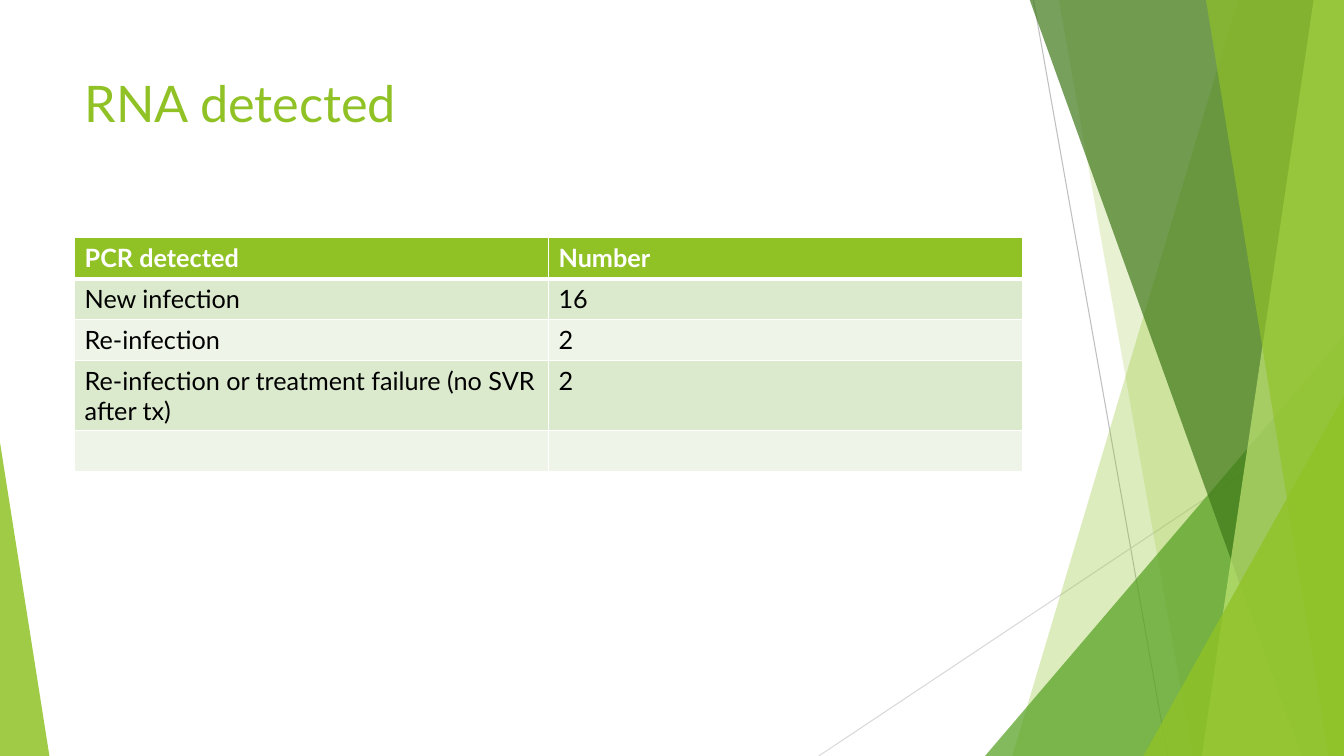
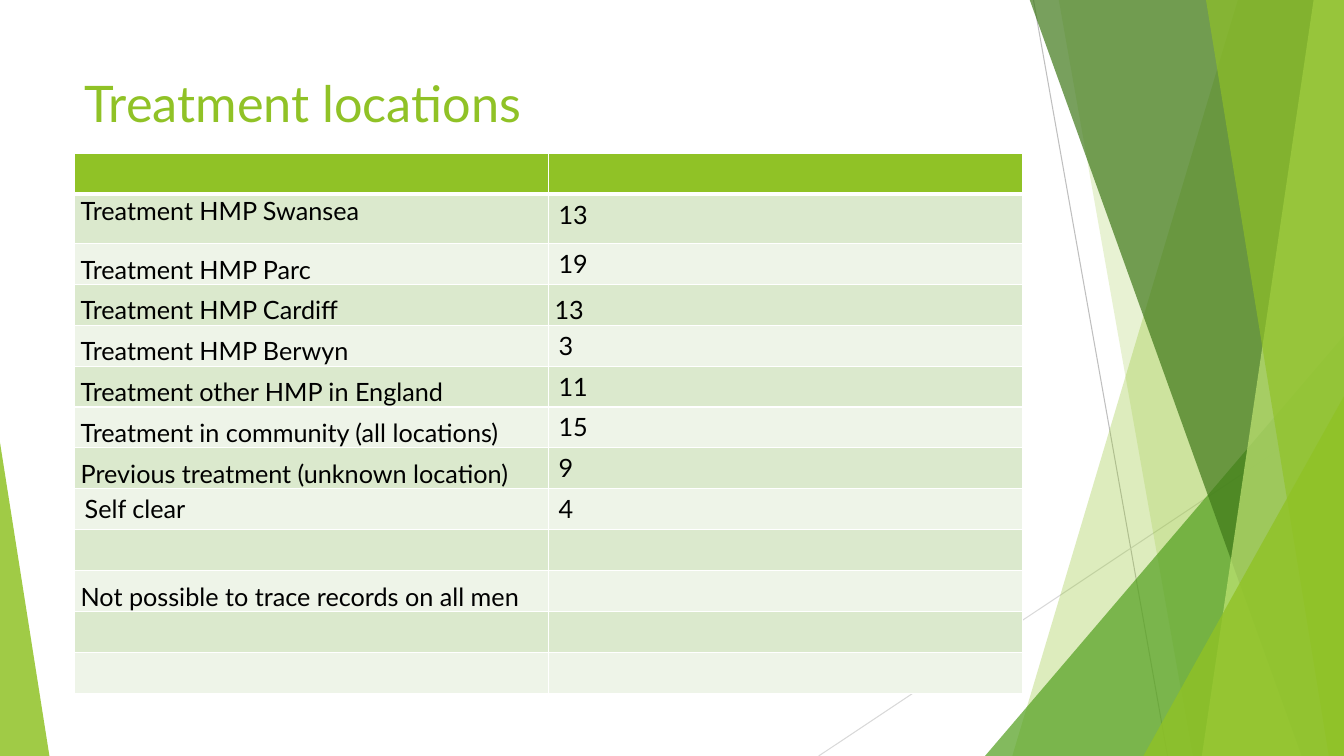
"""Build two slides of treatment figures on a shared green layout."""
from dataclasses import dataclass

from lxml.etree import SubElement as Sub
from pptx import Presentation
from pptx.dml.color import RGBColor as Rgb
from pptx.enum.shapes import MSO_CONNECTOR as Link, MSO_SHAPE as Form
from pptx.enum.text import MSO_ANCHOR as Anchor, MSO_AUTO_SIZE as Auto, PP_ALIGN as Align
from pptx.oxml.ns import qn
from pptx.slide import Slide, SlideLayout
from pptx.table import _Cell as Cell
from pptx.text.text import _Paragraph as Para
from pptx.util import Inches, Pt

HUES = {
    "lime": "90C226", "green": "54A021", "dark": "3F7819", "pale": "C0E474",
    "grey": "BFBFBF", "mist": "D9D9D9", "odd": "DBE9CD", "even": "EEF4E8",
    "white": "FFFFFF", "black": "000000",
}
FONT = "Lato"
WIDE, HIGH = 13.33, 7.5
LEFT, SPAN, TOP = 0.74, 9.4, 0.67


@dataclass
class Ray:
    start: tuple[float, float]
    end: tuple[float, float]
    hue: str


@dataclass
class Slab:
    top: float
    base: float
    hue: str
    alpha: int


@dataclass
class Wedge:
    left: float
    top: float
    width: float
    peak: int
    hue: str
    alpha: int


@dataclass
class Row:
    name: str = ""
    count: str = ""
    low: str = ""
    foot: float = 0


@dataclass
class Page:
    title: str
    depth: float
    top: float
    height: float
    tall: int
    extra: float
    rows: list[Row]


ART = [
    Ray((10.25, 0), (11.58, HIGH), "grey"),
    Ray((WIDE, 4.03), (8.12, HIGH), "mist"),
    Slab(12.28, 10.04, "lime", 30),
    Slab(10.5, 11.83, "lime", 20),
    Wedge(9.77, 3.33, 3.56, 1, "green", 72),
    Slab(10.21, 12.91, "dark", 70),
    Slab(13.03, 11.92, "pale", 70),
    Slab(11.96, 13.18, "lime", 65),
    Wedge(11.34, 3.93, 1.99, 1, "lime", 80),
    Wedge(0, 4.39, 0.49, 0, "lime", 85),
]

PAGES = [
    Page("RNA detected", 1.44, 2.36, 2.32, 3, 0.7, [
        Row("PCR detected", "Number"),
        Row("New infection", "16"),
        Row("Re-infection", "2"),
        Row("Re-infection or treatment failure (no SVR after tx)", "2"),
        Row(),
    ]),
    Page("Treatment locations", 0.85, 1.52, 5.36, 1, 0.49, [
        Row(),
        Row("Treatment HMP Swansea", "13", "n", 0.18),
        Row("Treatment HMP Parc", "19", "n"),
        Row("Treatment HMP Cardiff", "13", "nc"),
        Row("Treatment HMP Berwyn", "3", "n"),
        Row("Treatment other HMP in England", "11", "n"),
        Row("Treatment in community (all locations)", "15", "n"),
        Row("Previous treatment (unknown location)", "9", "n"),
        Row("Self clear", "4"),
        Row(),
        Row("Not possible to trace records on all men", "", "n"),
        Row(),
        Row(),
    ]),
]


def tint(hue: str) -> Rgb:
    return Rgb.from_string(HUES[hue])


def write(para: Para, text: str, size: int, hue: str, bold: bool = False) -> None:
    run = para.add_run()
    run.text = text
    run.font.name, run.font.size, run.font.bold = FONT, Pt(size), bold
    run.font.color.rgb = tint(hue)


def paint(shape, hue: str, alpha: int) -> None:
    shape.shadow.inherit = False
    shape.fill.solid()
    shape.fill.fore_color.rgb = tint(hue)
    shape.line.fill.background()
    color = shape.element.spPr.find(".//" + qn("a:srgbClr"))
    Sub(color, qn("a:alpha"), val=str(alpha * 1000))


def draw(shapes, part: Ray | Slab | Wedge) -> None:
    if isinstance(part, Ray):
        ends = [Inches(n) for n in part.start + part.end]
        line = shapes.add_connector(Link.STRAIGHT, *ends)
        line.line.color.rgb = tint(part.hue)
        line.line.width = Pt(0.75)
        Sub(line.element.spPr, qn("a:effectLst"))
        return
    if isinstance(part, Slab):
        dots = [(part.top, -0.01), (WIDE, -0.01), (WIDE, HIGH), (part.base, HIGH)]
        first, *rest = [(Inches(x), Inches(y)) for x, y in dots]
        pen = shapes.build_freeform(*first)
        pen.add_line_segments(rest)
        shape = pen.convert_to_shape()
    else:
        box = (part.left, part.top, part.width, HIGH - part.top)
        shape = shapes.add_shape(Form.ISOSCELES_TRIANGLE, *map(Inches, box))
        shape.adjustments[0] = part.peak
    paint(shape, part.hue, part.alpha)


def adorn(slide: Slide, layout: SlideLayout) -> None:
    group = slide.shapes.add_group_shape()
    for part in ART:
        draw(group.shapes, part)
    for num, tag in enumerate(group.element.iter(qn("p:cNvPr")), 100):
        tag.set("id", str(num))
    layout.shapes.element.insert(2, group.element)


def edge(cell: Cell, top: int, base: int) -> None:
    props = cell._tc.get_or_add_tcPr()
    for spot, (side, size) in enumerate(zip("LRTB", (1, 1, top, base))):
        line = Sub(props, qn(f"a:ln{side}"), w=str(Pt(size)))
        fill = Sub(line, qn("a:solidFill"))
        Sub(fill, qn("a:srgbClr"), val=HUES["white"])
        props.insert(spot, line)


def fill(cell: Cell, text: str, rank: int, low: bool, foot: float) -> None:
    head = rank == 0
    cell.fill.solid()
    cell.fill.fore_color.rgb = tint("lime" if head else "odd" if rank % 2 else "even")
    edge(cell, 3 if rank == 1 else 1, 3 if head else 1)
    if low:
        cell.vertical_anchor = Anchor.BOTTOM
        cell.margin_left, cell.margin_right = Inches(0.06), Inches(0.01)
        cell.margin_top, cell.margin_bottom = Inches(0.01), Inches(foot)
    if text:
        write(cell.text_frame.paragraphs[0], text, 18, "white" if head else "black", head)


def chart(slide: Slide, page: Page) -> None:
    box = map(Inches, (LEFT, page.top, SPAN, page.height))
    table = slide.shapes.add_table(len(page.rows), 2, *box).table
    step = (page.height - page.extra) / (len(page.rows) - 1)
    for rank, row in enumerate(page.rows):
        table.rows[rank].height = Inches(page.extra if rank == page.tall else step)
        fill(table.cell(rank, 0), row.name, rank, "n" in row.low, row.foot)
        fill(table.cell(rank, 1), row.count, rank, "c" in row.low, 0)


def label(slide: Slide, page: Page) -> None:
    title = slide.shapes.title
    title.left, title.top = Inches(LEFT), Inches(TOP)
    title.width, title.height = Inches(SPAN), Inches(page.depth)
    frame = title.text_frame
    frame.word_wrap, frame.auto_size = True, Auto.NONE
    frame.vertical_anchor = Anchor.TOP
    para = frame.paragraphs[0]
    para.alignment = Align.LEFT
    write(para, page.title, 36, "lime")


def main() -> None:
    deck = Presentation()
    deck.slide_width, deck.slide_height = Inches(WIDE), Inches(HIGH)
    layout = deck.slide_layouts.get_by_name("Title Only")
    for page in PAGES:
        slide = deck.slides.add_slide(layout)
        label(slide, page)
        chart(slide, page)
    adorn(deck.slides[0], layout)
    deck.save("out.pptx")


if __name__ == "__main__":
    main()
